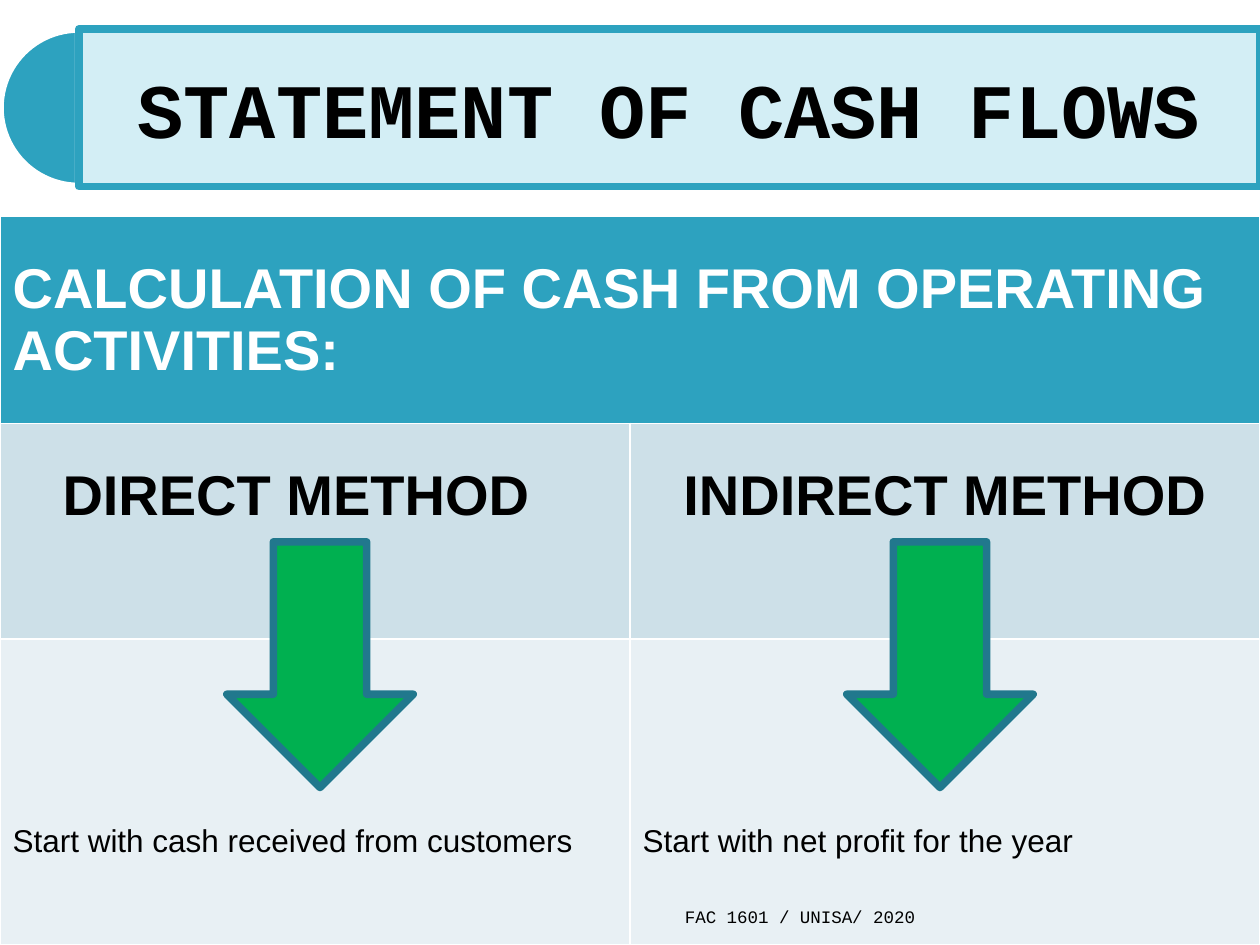
from lxml import etree
from pptx import Presentation
from pptx import util as u
from pptx.dml.color import RGBColor
from pptx.enum import shapes, text
from pptx.oxml.ns import qn

TEAL = RGBColor(0x2D, 0xA2, 0xBF)
DARK_TEAL = RGBColor(0x21, 0x78, 0x8D)
PALE_TEAL = RGBColor(0xD3, 0xEE, 0xF5)
BLUE_GREY = RGBColor(0xCD, 0xE0, 0xE8)
LIGHT_GREY = RGBColor(0xE8, 0xF0, 0xF4)
GREEN = RGBColor(0x00, 0xB0, 0x50)
WHITE = RGBColor(0xFF, 0xFF, 0xFF)
BLACK = RGBColor(0, 0, 0)

ALIGN, ANCHOR = text.PP_ALIGN, text.MSO_ANCHOR


def paint(shape, fill, outline):
    """Fill a shape and give it a thick outline with rounded corners."""
    shape.fill.solid()
    shape.fill.fore_color.rgb = fill
    shape.line.color.rgb = outline
    shape.line.width = u.Pt(4.33)
    etree.SubElement(shape.line._get_or_add_ln(), qn("a:round"))
    shape.shadow.inherit = False


def write(frame, words, align, size, color=BLACK, bold=False, face="Arial"):
    frame.text = words
    paragraph = frame.paragraphs[0]
    paragraph.alignment = align
    font = paragraph.runs[0].font
    formats = {"name": face, "size": u.Pt(size), "bold": bold}
    for attribute, value in formats.items():
        setattr(font, attribute, value)
    font.color.rgb = color


prs = Presentation()
prs.slide_width, prs.slide_height = u.Inches(10), u.Inches(7.5)
slide = prs.slides.add_slide(prs.slide_layouts[5])
column = prs.slide_width // 2

# Title banner: a half disc with the title panel starting at its centre
banner_top, banner_height = u.Inches(0.23), u.Inches(1.25)
half_disc = slide.shapes.add_shape(
    shapes.MSO_SHAPE.PIE, 0, banner_top, banner_height, banner_height)
half_disc.adjustments[0], half_disc.adjustments[1] = 54, 162
paint(half_disc, TEAL, WHITE)

title = slide.shapes.title
title.left, title.top = banner_height // 2, banner_top
title.width, title.height = prs.slide_width - title.left, banner_height
paint(title, PALE_TEAL, TEAL)
write(title.text_frame, "STATEMENT OF CASH FLOWS", ALIGN.CENTER, 44,
      bold=True, face="Courier New")
title.text_frame.vertical_anchor = ANCHOR.MIDDLE
half_disc._element.addnext(title._element)

# Methods table
row_heights = [u.Inches(h) for h in (1.64, 1.71, 2.43)]
table_top = prs.slide_height - sum(row_heights)
methods = slide.shapes.add_table(
    3, 2, 0, table_top, prs.slide_width, sum(row_heights)).table
for row, height in zip(methods.rows, row_heights):
    row.height = height

heading = methods.cell(0, 0)
heading.merge(methods.cell(0, 1))
heading.vertical_anchor = ANCHOR.MIDDLE
write(heading.text_frame, "CALCULATION OF CASH FROM OPERATING ACTIVITIES:",
      ALIGN.LEFT, 32, WHITE, bold=True)

columns = [
    ("DIRECT METHOD", "Start with cash received from customers", 0.4),
    ("INDIRECT METHOD", "Start with net profit for the year", 0.1),
]
for index, (method, start, right_margin) in enumerate(columns):
    name_cell, start_cell = methods.cell(1, index), methods.cell(2, index)
    write(name_cell.text_frame, method, ALIGN.CENTER, 32, bold=True)
    name_cell.margin_top = u.Inches(0.33)
    name_cell.margin_right = u.Inches(right_margin)
    write(start_cell.text_frame, start, ALIGN.LEFT, 18)
    start_cell.margin_top = u.Inches(1.47)

for row, fill in zip(methods.rows, (TEAL, BLUE_GREY, LIGHT_GREY)):
    for cell in row.cells:
        cell.fill.solid()
        cell.fill.fore_color.rgb = fill

# Arrows from each method to its starting point
for left in (0.18, 0.672):
    arrow = slide.shapes.add_shape(
        shapes.MSO_SHAPE.DOWN_ARROW, int(left * prs.slide_width),
        u.Inches(4.3), u.Inches(1.48), u.Inches(1.95))
    paint(arrow, GREEN, DARK_TEAL)

# Footer
footer = slide.shapes.add_textbox(
    u.Inches(4.79), u.Inches(7.01), u.Inches(2.57), u.Inches(0.4)).text_frame
footer.word_wrap = True
footer.vertical_anchor = ANCHOR.BOTTOM
write(footer, "FAC 1601 / UNISA/ 2020", ALIGN.RIGHT, 10, face="Courier New")

prs.save("out.pptx")
